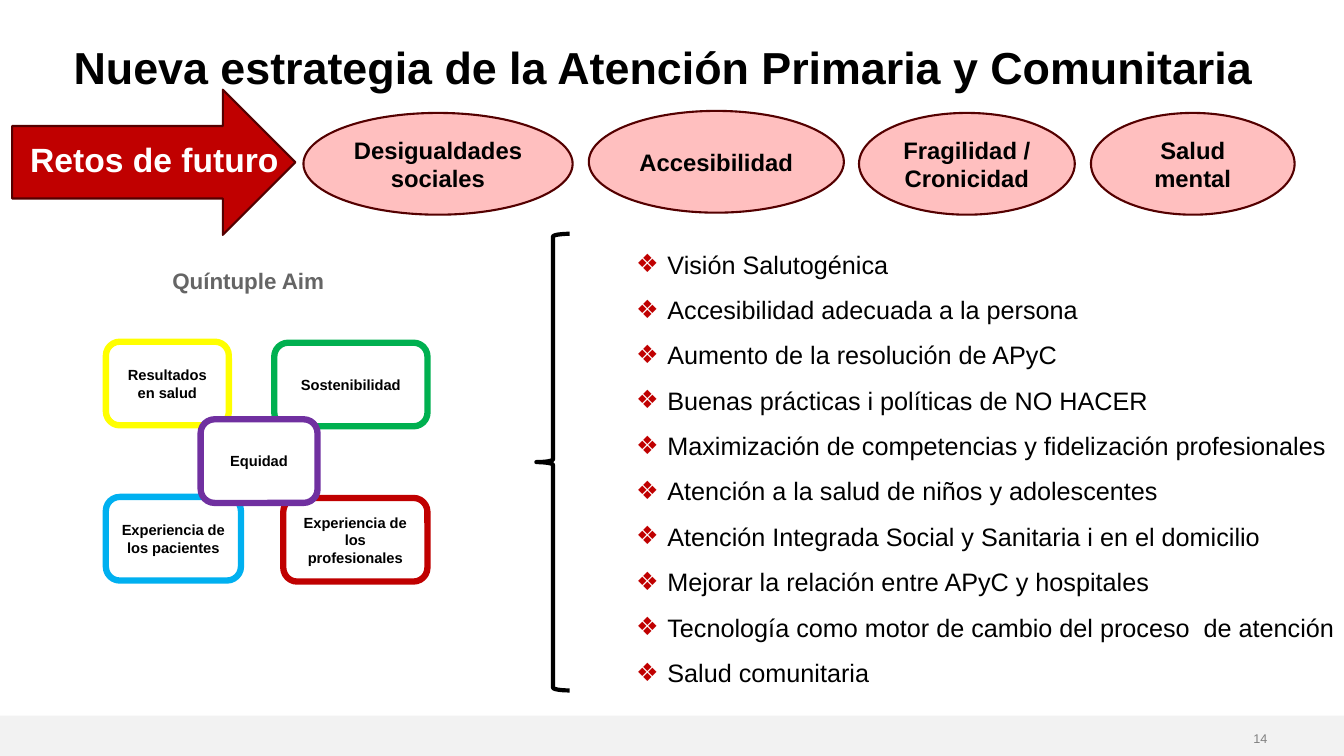
"""Build the slide on the new primary and community care strategy."""
from lxml import etree
from pptx import Presentation
from pptx import util as u
from pptx.dml.color import RGBColor
from pptx.enum import shapes, text
from pptx.oxml.ns import qn

PX = 9144
FONT = "Arial"
BLACK = RGBColor(0x00, 0x00, 0x00)
WHITE = RGBColor(0xFF, 0xFF, 0xFF)
GREY = RGBColor(0x80, 0x80, 0x80)
DARK_GREY = RGBColor(0x65, 0x65, 0x65)
FOOTER = RGBColor(0xF2, 0xF2, 0xF2)
RED = RGBColor(0xC0, 0x00, 0x00)
MAROON = RGBColor(0x54, 0x00, 0x00)
PINK = RGBColor(0xFF, 0xBF, 0xBF)
BLUE = RGBColor(0x00, 0xB0, 0xF0)
YELLOW = RGBColor(0xFF, 0xFF, 0x00)
GREEN = RGBColor(0x00, 0xB0, 0x50)
PURPLE = RGBColor(0x70, 0x30, 0xA0)

AIMS = [
    ("Experiencia de los pacientes", (105, 493, 134, 83), BLUE),
    ("Resultados en salud", (105, 339, 122, 83), YELLOW),
    ("Sostenibilidad", (272, 340, 152, 83), GREEN),
    ("Experiencia de los profesionales", (281, 494, 143, 83), RED),
    ("Equidad", (199, 416, 116, 83), PURPLE),
]
CHALLENGES = [
    ("Desigualdades sociales", (301, 112, 267, 101)),
    ("Accesibilidad", (584, 110, 253, 101)),
    ("Fragilidad / Cronicidad", (852, 112, 214, 101)),
    ("Salud mental", (1082, 112, 202, 101)),
]
GOALS = [
    "Visión Salutogénica",
    "Accesibilidad adecuada a la persona",
    "Aumento de la resolución de APyC",
    "Buenas prácticas i políticas de NO HACER",
    "Maximización de competencias y fidelización profesionales",
    "Atención a la salud de niños y adolescentes",
    "Atención Integrada Social y Sanitaria i en el domicilio",
    "Mejorar la relación entre APyC y hospitales",
    "Tecnología como motor de cambio del proceso  de atención",
    "Salud comunitaria",
]


def emu(box):
    return [n * PX for n in box]


def style(p, size, color, bold=True, align=None):
    p.alignment = align
    for r in p.runs:
        r.font.name = FONT
        r.font.size = u.Pt(size)
        r.font.bold = bold
        r.font.color.rgb = color


def clear_insets(tf):
    tf.margin_left = tf.margin_top = tf.margin_right = tf.margin_bottom = 0


def add_title(s, title, box):
    sp = s.shapes.title
    sp.left, sp.top, sp.width, sp.height = emu(box)
    tf = sp.text_frame
    tf.text = title
    tf.auto_size = text.MSO_AUTO_SIZE.NONE
    tf.vertical_anchor = text.MSO_ANCHOR.TOP
    clear_insets(tf)
    p = tf.paragraphs[0]
    style(p, 32, BLACK, align=text.PP_ALIGN.LEFT)
    p.line_spacing = 0.9


def add_figure(s, kind, box, fill=None, line=None, width=1.5):
    sp = s.shapes.add_shape(kind, *emu(box))
    sp.shadow.inherit = False
    if fill is None:
        sp.fill.background()
    else:
        sp.fill.solid()
        sp.fill.fore_color.rgb = fill
    if line is None:
        sp.line.fill.background()
    else:
        sp.line.color.rgb = line
        sp.line.width = u.Pt(width)
    return sp


def add_caption(sp, caption, size):
    tf = sp.text_frame
    tf.text = caption
    tf.word_wrap = True
    tf.vertical_anchor = text.MSO_ANCHOR.MIDDLE
    style(tf.paragraphs[0], size, BLACK, align=text.PP_ALIGN.CENTER)


def add_label(s, label, box, size, color, bold=True, align=None):
    tf = s.shapes.add_textbox(*emu(box)).text_frame
    tf.text = label
    tf.word_wrap = True
    clear_insets(tf)
    for p in tf.paragraphs:
        style(p, size, color, bold, align)
    return tf


def add_bullet(p, indent):
    pPr = p._p.get_or_add_pPr()
    pPr.set("marL", str(indent * PX))
    pPr.set("indent", str(-indent * PX))
    clr = etree.SubElement(pPr, qn("a:buClr"))
    etree.SubElement(clr, qn("a:srgbClr"), val=str(RED))
    etree.SubElement(pPr, qn("a:buFont"), typeface=FONT)
    etree.SubElement(pPr, qn("a:buChar"), char="❖")


def add_goals(s, goals, box):
    tf = add_label(s, "\n".join(goals), box, 18, BLACK, False,
                   text.PP_ALIGN.JUSTIFY)
    for p in tf.paragraphs:
        add_bullet(p, 31)
        p.line_spacing = 1.5


def main():
    prs = Presentation()
    prs.slide_width, prs.slide_height = emu((1333, 750))
    s = prs.slides.add_slide(prs.slide_layouts[5])
    kinds = shapes.MSO_SHAPE

    add_figure(s, kinds.RECTANGLE, (0, 710, 1333, 40), FOOTER)
    add_label(s, "14", (1067, 725, 190, 13), 9, GREY, False,
              text.PP_ALIGN.RIGHT)
    add_title(s, "Nueva estrategia de la Atención Primaria y Comunitaria",
              (73, 45, 1177, 47))

    for caption, box, color in AIMS:
        sp = add_figure(s, kinds.ROUNDED_RECTANGLE, box, WHITE, color, 4.5)
        add_caption(sp, caption, 10.5)
    add_label(s, "Quíntuple Aim", (171, 265, 190, 31), 16, DARK_GREY)
    add_figure(s, kinds.LEFT_BRACE, (532, 232, 33, 453), None, BLACK, 3)

    for caption, box in CHALLENGES:
        sp = add_figure(s, kinds.OVAL, box, PINK, MAROON)
        add_caption(sp, caption, 17)
    add_goals(s, GOALS, (631, 232, 717, 258))
    add_figure(s, kinds.RIGHT_ARROW, (12, 89, 281, 144), RED, MAROON)
    add_label(s, "Retos de futuro", (30, 138, 300, 40), 24, WHITE)

    prs.save("out.pptx")


if __name__ == "__main__":
    main()
